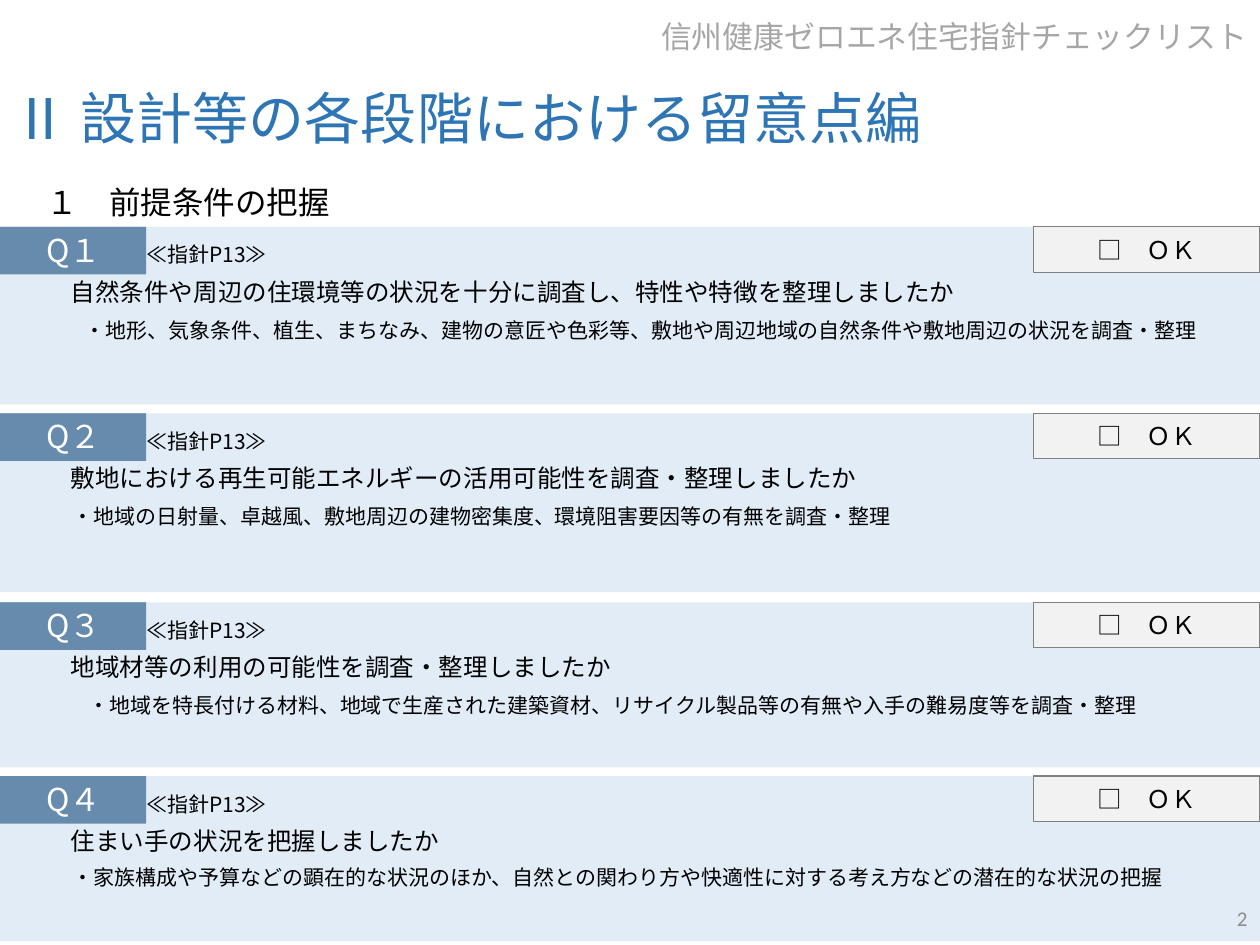
import pptx
import pptx.util
import pptx.dml.color
import pptx.enum.shapes
import pptx.enum.text
import pptx.oxml
import pptx.oxml.ns
from pptx.dml.color import RGBColor
from pptx.util import Pt

ALIGN = pptx.enum.text.PP_ALIGN
ANCHOR = pptx.enum.text.MSO_ANCHOR
RECTANGLE = pptx.enum.shapes.MSO_SHAPE.RECTANGLE

NAVY = RGBColor(0x1F, 0x4E, 0x79)
PALE_BLUE = RGBColor(0xBD, 0xD7, 0xEE)
TITLE_BLUE = RGBColor(0x2E, 0x75, 0xB6)
BUTTON_GRAY = RGBColor(0xF2, 0xF2, 0xF2)
BORDER_GRAY = RGBColor(0x80, 0x80, 0x80)
HEADER_GRAY = RGBColor(0xA6, 0xA6, 0xA6)
NUMBER_GRAY = RGBColor(0x8C, 0x8C, 0x8C)
BLACK = RGBColor(0, 0, 0)
WHITE = RGBColor(0xFF, 0xFF, 0xFF)

JAPANESE_FONT = "Noto Sans CJK JP"
SLIDE_WIDTH, SLIDE_HEIGHT = 720, 540
TAG_WIDTH, TAG_HEIGHT = 83.5, 27.2
OK_WIDTH, OK_HEIGHT = 129.6, 26

# top, height, label, question, detail, detail indent, detail line spacing
QUESTIONS = [
    (129.6, 101.5, "Q１", "自然条件や周辺の住環境等の状況を十分に調査し、特性や特徴を整理しましたか",
     "・地形、気象条件、植生、まちなみ、建物の意匠や色彩等、敷地や周辺地域の自然条件や敷地周辺の状況を調査・整理", 22, 0.9),
    (236.2, 102.2, "Q２", "敷地における再生可能エネルギーの活用可能性を調査・整理しましたか",
     "・地域の日射量、卓越風、敷地周辺の建物密集度、環境阻害要因等の有無を調査・整理", 15, 0.9),
    (344.2, 94.3, "Q３", "地域材等の利用の可能性を調査・整理しましたか",
     "・地域を特長付ける材料、地域で生産された建築資材、リサイクル製品等の有無や入手の難易度等を調査・整理", 24, 0.9),
    (443.5, 94.3, "Q４", "住まい手の状況を把握しましたか",
     "・家族構成や予算などの顕在的な状況のほか、自然との関わり方や快適性に対する考え方などの潜在的な状況の把握", 15, 0.8),
]


def style_paragraph(paragraph, size, color, font=JAPANESE_FONT):
    """Give every run of a paragraph its size, colour and typeface."""
    for run in paragraph.runs:
        run.font.size = Pt(size)
        run.font.color.rgb = color
        run.font.name = font
        east_asian = pptx.oxml.parse_xml(
            f'<a:ea {pptx.oxml.ns.nsdecls("a")} typeface="{font}"/>')
        run.font._element.append(east_asian)


def add_text(slide, left, top, width, height, text, size, color,
             align=ALIGN.LEFT, anchor=ANCHOR.TOP, font=JAPANESE_FONT, spacing=1.0):
    """Add a wrapping text box with one styled paragraph per line."""
    frame = slide.shapes.add_textbox(Pt(left), Pt(top), Pt(width), Pt(height)).text_frame
    frame.word_wrap = True
    frame.vertical_anchor = anchor
    frame.text = text
    for paragraph in frame.paragraphs:
        paragraph.alignment = align
        paragraph.line_spacing = spacing
        style_paragraph(paragraph, size, color, font)
    return frame


def add_block(slide, left, top, width, height, color):
    """Add a plain filled rectangle without outline or shadow."""
    block = slide.shapes.add_shape(RECTANGLE, Pt(left), Pt(top), Pt(width), Pt(height))
    block.shadow.inherit = False
    block.fill.solid()
    block.fill.fore_color.rgb = color
    block.line.fill.background()
    return block


def add_ok_button(slide, left, top):
    """Add the bordered check field."""
    button = add_block(slide, left, top, OK_WIDTH, OK_HEIGHT, BUTTON_GRAY)
    button.line.color.rgb = BORDER_GRAY
    button.line.width = Pt(0.75)
    frame = button.text_frame
    frame.text = "□　ＯＫ"
    frame.vertical_anchor = ANCHOR.MIDDLE
    frame.paragraphs[0].alignment = ALIGN.CENTER
    style_paragraph(frame.paragraphs[0], 14, BLACK)


def add_question(slide, left, top, width, height, label, question, detail,
                 detail_indent, detail_spacing):
    """Add one question band with its tag, wording, reference and check field."""
    add_block(slide, left, top, TAG_WIDTH, TAG_HEIGHT, NAVY)
    band = add_block(slide, left, top, width, height, PALE_BLUE)
    band_color = band._element.spPr.find(".//" + pptx.oxml.ns.qn("a:srgbClr"))
    band_color.append(pptx.oxml.parse_xml(
        f'<a:alpha {pptx.oxml.ns.nsdecls("a")} val="45000"/>'))

    frame = add_text(slide, left + 19.4, top + 3, width - 39, height - 3,
                     "\n".join((label, question, detail)), 12, BLACK, spacing=0.8)
    label_line, question_line, detail_line = frame.paragraphs
    for line, size, color, indent in ((label_line, 18, WHITE, 0),
                                      (question_line, 14, BLACK, 14),
                                      (detail_line, 12, BLACK, detail_indent)):
        line.runs[0].font.size = Pt(size)
        line.runs[0].font.color.rgb = color
        line._p.get_or_add_pPr().set("marL", str(Pt(indent)))
    question_line.space_before = detail_line.space_before = Pt(8)
    detail_line.line_spacing = detail_spacing

    add_ok_button(slide, left + width - OK_WIDTH, top)
    add_text(slide, left + 70.6, top + 5, 95, 21.8, "≪指針P13≫", 12, BLACK, ALIGN.CENTER)


def add_heading(slide, left, top, width):
    """Add the running header, the title and the section name."""
    add_text(slide, left, top, width, 44, "信州健康ゼロエネ住宅指針チェックリスト", 17.6,
             HEADER_GRAY, ALIGN.RIGHT, ANCHOR.MIDDLE, spacing=0.9)
    add_text(slide, left, top + 44.6, width, 49, "Ⅱ 設計等の各段階における留意点編", 32,
             TITLE_BLUE, anchor=ANCHOR.MIDDLE, spacing=0.9)
    add_text(slide, left + 19.4, top + 100.8, 196.6, 28.8, "１　前提条件の把握", 18, BLACK)


def main():
    """Build and save the checklist slide."""
    presentation = pptx.Presentation()
    presentation.slide_width, presentation.slide_height = Pt(SLIDE_WIDTH), Pt(SLIDE_HEIGHT)
    slide = presentation.slides.add_slide(presentation.slide_layouts[6])
    add_heading(slide, 0, 0, SLIDE_WIDTH)
    for top, height, *content in QUESTIONS:
        add_question(slide, 0, top, SLIDE_WIDTH, height, *content)
    add_text(slide, 558, 510.5, 162, 28.8, "2", 12, NUMBER_GRAY,
             ALIGN.RIGHT, ANCHOR.MIDDLE, "Calibri")
    presentation.save("out.pptx")


if __name__ == "__main__":
    main()
